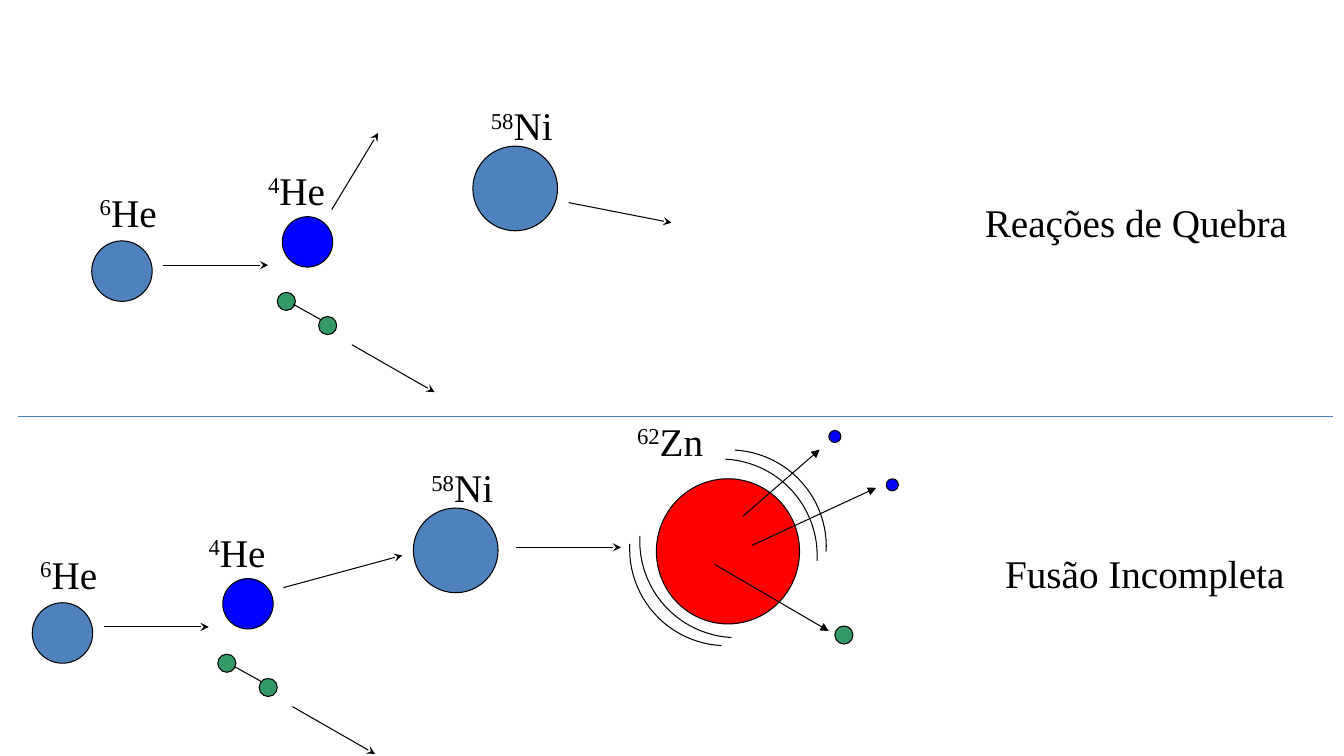
"""Builds a slide comparing breakup and incomplete fusion of a helium-6 projectile."""
import math

import lxml.etree
import pptx
import pptx.dml.color
import pptx.enum.shapes
import pptx.enum.text
import pptx.util

PX = 9144
SLIDE_SIZE = (1333, 750)
THEME = {
    "font": "Times New Roman", "text_size": 28, "line_width": 0.75, "superscript": 30000,
    "ink": "000000", "nucleus": "4F81BD", "alpha": "0000FF", "neutron": "339966",
    "compound": "FF0000", "divider": "4B7EBC",
}

SHARED_NUCLEI = [
    (91, 239, 60, 60, "nucleus", 0),
    (469, 145, 84, 84, "nucleus", 0),
    (280, 215, 50, 50, "alpha", 0),
    (275, 290, 18, 18, "neutron", 30),
    (316, 314, 18, 18, "neutron", 30),
]
SHARED_LINES = [
    (162, 263, 266, 263, "stealth"),
    (291, 302, 318, 317, None),
    (349, 342, 431, 389, "stealth"),
]
SHARED_LABELS = [
    (89, 182, 79, "6", "He"),
    (477, 96, 86, "58", "Ni"),
    (256, 160, 79, "4", "He"),
]
REACTIONS = [
    {
        "title": ("Reações de Quebra", 967, 192, 320),
        "shift": (0, 0),
        "nuclei": [], "arcs": [], "labels": [],
        "lines": [(329, 208, 375, 132, "stealth"), (564, 201, 666, 221, "stealth")],
    },
    {
        "title": ("Fusão Incompleta", 987, 540, 300),
        "shift": (-59, 359),
        "nuclei": [
            (651, 475, 142, 144, "compound", 0),
            (822, 427, 12, 12, "alpha", 0),
            (879, 475, 12, 12, "alpha", 0),
            (828, 621, 18, 18, "neutron", 0),
        ],
        "arcs": [(717, 458, 3), (726, 449, 3), (632, 534, 183), (622, 542, 183)],
        "labels": [(622, 409, 90, "62", "Zn")],
        "lines": [
            (281, 583, 399, 551, "stealth"),
            (512, 543, 616, 543, "stealth"),
            (737, 512, 813, 446, "triangle"),
            (746, 541, 869, 484, "triangle"),
            (709, 560, 822, 626, "triangle"),
        ],
    },
]
DIVIDER = (18, 413, 1322, 413)
LABEL_HEIGHT = 57
ARC_RADIUS = 96
ARC_STEPS = 24


def emu(*lengths):
    return [round(length * PX) for length in lengths]


def color(name):
    return pptx.dml.color.RGBColor.from_string(THEME[name])


def draw_outline(line, name="ink"):
    line.color.rgb = color(name)
    line.width = pptx.util.Pt(THEME["line_width"])


def add_text(shapes, text, *, left, top, width, superscript=""):
    box = shapes.add_textbox(*emu(left, top, width, LABEL_HEIGHT))
    frame = box.text_frame
    frame.word_wrap = False
    frame.auto_size = pptx.enum.text.MSO_AUTO_SIZE.SHAPE_TO_FIT_TEXT
    para = frame.paragraphs[0]
    for content, baseline in ((superscript, THEME["superscript"]), (text, 0)):
        if not content:
            continue
        span = para.add_run()
        span.text = content
        span.font.name = THEME["font"]
        span.font.size = pptx.util.Pt(THEME["text_size"])
        span.font.color.rgb = color("ink")
        if baseline:
            span.font._element.set("baseline", str(baseline))


def add_nucleus(shapes, left, top, width, height, fill, rotation):
    ball = shapes.add_shape(pptx.enum.shapes.MSO_SHAPE.OVAL, *emu(left, top, width, height))
    ball.shadow.inherit = False
    ball.rotation = rotation
    ball.fill.solid()
    ball.fill.fore_color.rgb = color(fill)
    draw_outline(ball.line)


def add_line(shapes, start_x, start_y, end_x, end_y, head=None, name="ink"):
    line = shapes.add_connector(
        pptx.enum.shapes.MSO_CONNECTOR.STRAIGHT, *emu(start_x, start_y, end_x, end_y))
    draw_outline(line.line, name)
    if head:
        tail = lxml.etree.SubElement(line.line._get_or_add_ln(), pptx.oxml.ns.qn("a:tailEnd"))
        tail.set("type", head)
    lxml.etree.SubElement(line._element.spPr, pptx.oxml.ns.qn("a:effectLst"))


def add_arc(shapes, left, top, rotation):
    angles = [math.pi / 2 * step / ARC_STEPS for step in range(ARC_STEPS + 1)]
    points = [
        emu(left + ARC_RADIUS * math.sin(angle), top + ARC_RADIUS * (1 - math.cos(angle)))
        for angle in angles
    ]
    builder = shapes.build_freeform(*points[0])
    builder.add_line_segments(points[1:], close=False)
    arc = builder.convert_to_shape()
    arc.shadow.inherit = False
    arc.rotation = rotation
    arc.fill.background()
    draw_outline(arc.line)


def add_reaction(page, reaction):
    title, left, top, width = reaction["title"]
    add_text(page.shapes, title, left=left, top=top, width=width)
    shift_x, shift_y = reaction["shift"]
    shapes = page.shapes.add_group_shape().shapes
    for x, y, *rest in SHARED_NUCLEI:
        add_nucleus(shapes, x + shift_x, y + shift_y, *rest)
    for nucleus in reaction["nuclei"]:
        add_nucleus(shapes, *nucleus)
    for arc in reaction["arcs"]:
        add_arc(shapes, *arc)
    for x1, y1, x2, y2, head in SHARED_LINES:
        add_line(shapes, x1 + shift_x, y1 + shift_y, x2 + shift_x, y2 + shift_y, head)
    for line in reaction["lines"]:
        add_line(shapes, *line)
    shifted = [(x + shift_x, y + shift_y, *rest) for x, y, *rest in SHARED_LABELS]
    for x, y, width, mass, symbol in shifted + reaction["labels"]:
        add_text(shapes, symbol, left=x, top=y, width=width, superscript=mass)


def main():
    deck = pptx.Presentation()
    deck.slide_width, deck.slide_height = emu(*SLIDE_SIZE)
    page = deck.slides.add_slide(deck.slide_layouts[6])
    for reaction in REACTIONS:
        add_reaction(page, reaction)
    add_line(page.shapes, *DIVIDER, name="divider")
    deck.save("out.pptx")


if __name__ == "__main__":
    main()
